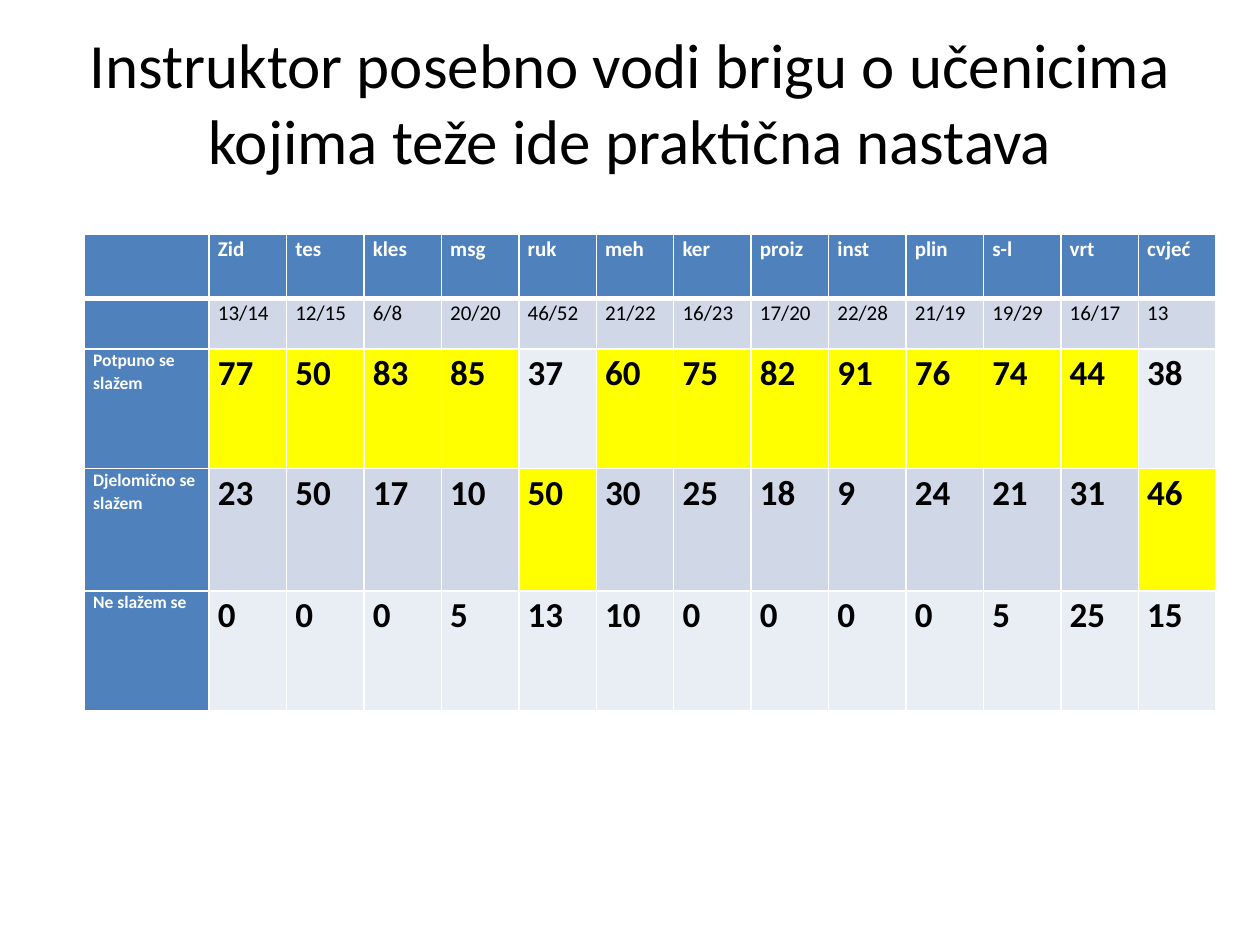
from lxml.etree import SubElement
from pptx import Presentation
from pptx.dml.color import RGBColor
from pptx.enum.text import MSO_ANCHOR, PP_ALIGN
from pptx.oxml.ns import qn
from pptx.util import Inches, Pt

COLORS = {
    "text": "000000",
    "light": "FFFFFF",
    "heading": "4F81BD",
    "odd_band": "D0D8E8",
    "even_band": "E9EDF4",
    "highlight": "FFFF00",
}
FONT = "Calibri"
TITLE = "Instruktor posebno vodi brigu o učenicima kojima teže ide praktična nastava"
TRADES = ["Zid", "tes", "kles", "msg", "ruk", "meh", "ker",
          "proiz", "inst", "plin", "s-l", "vrt", "cvjeć"]
COUNTS = ["13/14", "12/15", "6/8", "20/20", "46/52", "21/22", "16/23",
          "17/20", "22/28", "21/19", "19/29", "16/17", "13"]
ANSWERS = {
    "Potpuno se slažem": [77, 50, 83, 85, 37, 60, 75, 82, 91, 76, 74, 44, 38],
    "Djelomično se slažem": [23, 50, 17, 10, 50, 30, 25, 18, 9, 24, 21, 31, 46],
    "Ne slažem se": [0, 0, 0, 5, 13, 10, 0, 0, 0, 0, 5, 25, 15],
}
FIRST_ANSWER_ROW = 2
ROW_HEIGHTS = [0.51, 0.4, 0.95, 0.97, 0.95]
LABEL_WIDTH = 0.99
TABLE_WIDTH = 8.98


def format_runs(paragraph, size, color, bold=False):
    for run in paragraph.runs:
        run.font.name = FONT
        run.font.size = Pt(size)
        run.font.bold = bold
        run.font.color.rgb = RGBColor.from_string(COLORS[color])


def add_title(slide):
    title = slide.shapes.title
    title.left, title.top = Inches(0.5), Inches(0.3)
    title.width, title.height = Inches(9), Inches(1.01)
    frame = title.text_frame
    frame.text = TITLE
    frame.word_wrap = True
    frame.vertical_anchor = MSO_ANCHOR.MIDDLE
    paragraph = frame.paragraphs[0]
    paragraph.alignment = PP_ALIGN.CENTER
    format_runs(paragraph, 36, "text")


def set_borders(cell, top, bottom):
    properties = cell._tc.get_or_add_tcPr()
    for side, width in {"L": 1, "R": 1, "T": top, "B": bottom}.items():
        border = SubElement(properties, qn(f"a:ln{side}"), w=str(Pt(width)))
        fill = SubElement(border, qn("a:solidFill"))
        SubElement(fill, qn("a:srgbClr"), val=COLORS["light"])


def fill_cell(cell, text, fill, size, color, bold):
    cell.fill.solid()
    cell.fill.fore_color.rgb = RGBColor.from_string(COLORS[fill])
    cell.margin_left = cell.margin_right = Inches(0.07)
    cell.margin_top = cell.margin_bottom = 0
    paragraph = cell.text_frame.paragraphs[0]
    paragraph.text = text
    paragraph.line_spacing = 1.07
    format_runs(paragraph, size, color, bold)


def cell_style(row, column, top_rows):
    if row == 0:
        return "heading", 12, "light", True
    if column == 0:
        return "heading", 10, "light", True
    band = "odd_band" if row % 2 else "even_band"
    if row < FIRST_ANSWER_ROW:
        return band, 12, "text", False
    fill = "highlight" if top_rows[column - 1] == row else band
    return fill, 20, "text", True


def add_answer_table(slide):
    rows = [["", *TRADES], ["", *COUNTS]]
    rows += [[label, *map(str, shares)] for label, shares in ANSWERS.items()]
    top_rows = [FIRST_ANSWER_ROW + shares.index(max(shares))
                for shares in zip(*ANSWERS.values())]

    table = slide.shapes.add_table(
        len(rows), len(rows[0]), Inches(0.67), Inches(1.86),
        Inches(TABLE_WIDTH), Inches(sum(ROW_HEIGHTS))).table
    trade_width = (TABLE_WIDTH - LABEL_WIDTH) / len(TRADES)
    for index, column in enumerate(table.columns):
        column.width = Inches(trade_width if index else LABEL_WIDTH)
    for row, height in zip(table.rows, ROW_HEIGHTS):
        row.height = Inches(height)

    for r, texts in enumerate(rows):
        for c, text in enumerate(texts):
            cell = table.cell(r, c)
            set_borders(cell, top=3 if r == 1 else 1, bottom=3 if r == 0 else 1)
            fill_cell(cell, text, *cell_style(r, c, top_rows))


def main():
    presentation = Presentation()
    presentation.slide_width = Inches(10)
    presentation.slide_height = Inches(7.5)
    slide = presentation.slides.add_slide(presentation.slide_layouts[5])
    add_title(slide)
    add_answer_table(slide)
    presentation.save("out.pptx")


if __name__ == "__main__":
    main()
